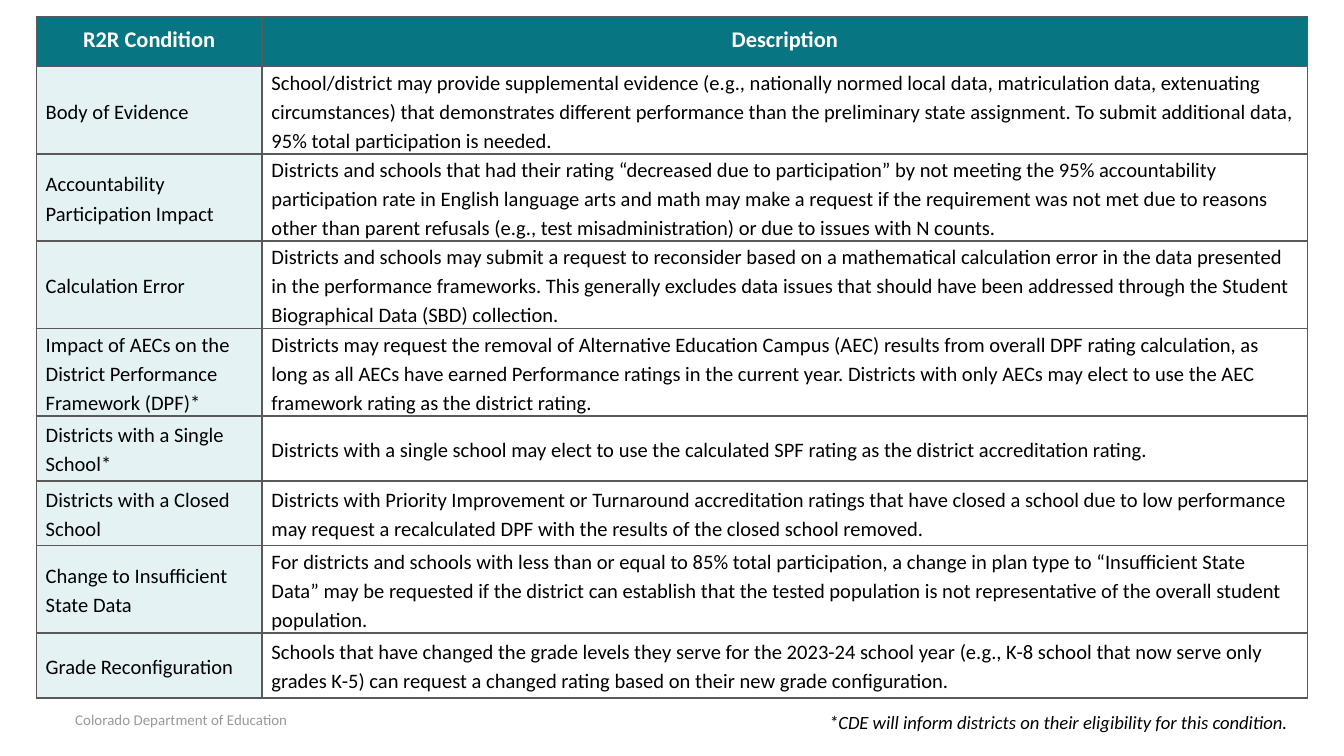
from dataclasses import dataclass

from lxml.etree import SubElement
from pptx import Presentation
from pptx.dml.color import RGBColor
from pptx.enum.text import MSO_ANCHOR as Anchor, PP_ALIGN as Align
from pptx.oxml.ns import qn
from pptx.util import Inches, Pt

WIDTH, HEIGHT = 10, 5.625
COLORS = {
    "header": "077682",
    "condition": "E4F2F4",
    "description": "FFFFFF",
    "border": "595959",
    "white": "FFFFFF",
    "black": "000000",
    "footer": "999999",
}
TABLE_LEFT, TABLE_TOP = 0.27, 0.125
COLUMN_WIDTHS = (1.68, 7.78)
HEADER_HEIGHT = 0.37
ROW_HEIGHTS = {2: 0.483, 3: 0.65}  # by number of text lines
CELL_MARGIN = 0.07


@dataclass(frozen=True)
class Condition:
    name: str
    description: str
    lines: int = 3


@dataclass(frozen=True)
class Area:
    """A place on the slide, as shares of its width and height."""
    left: float
    top: float
    width: float
    height: float


HEADINGS = ("R2R Condition", "Description")
CONDITIONS = (
    Condition(
        "Body of Evidence",
        "School/district may provide supplemental evidence (e.g., nationally normed local data, "
        "matriculation data, extenuating circumstances) that demonstrates different performance "
        "than the preliminary state assignment. To submit additional data, 95% total "
        "participation is needed."),
    Condition(
        "Accountability Participation Impact",
        "Districts and schools that had their rating “decreased due to participation” by not "
        "meeting the 95% accountability participation rate in English language arts and math may "
        "make a request if the requirement was not met due to reasons other than parent refusals "
        "(e.g., test misadministration) or due to issues with N counts."),
    Condition(
        "Calculation Error",
        "Districts and schools may submit a request to reconsider based on a mathematical "
        "calculation error in the data presented in the performance frameworks. This generally "
        "excludes data issues that should have been addressed through the Student Biographical "
        "Data (SBD) collection."),
    Condition(
        "Impact of AECs on the District Performance Framework (DPF)*",
        "Districts may request the removal of Alternative Education Campus (AEC) results from "
        "overall DPF rating calculation, as long as all AECs have earned Performance ratings in "
        "the current year. Districts with only AECs may elect to use the AEC framework rating as "
        "the district rating."),
    Condition(
        "Districts with a Single School*",
        "Districts with a single school may elect to use the calculated SPF rating as the "
        "district accreditation rating.", lines=2),
    Condition(
        "Districts with a Closed School",
        "Districts with Priority Improvement or Turnaround accreditation ratings that have closed "
        "a school due to low performance may request a recalculated DPF with the results of the "
        "closed school removed.", lines=2),
    Condition(
        "Change to Insufficient State Data",
        "For districts and schools with less than or equal to 85% total participation, a change "
        "in plan type to “Insufficient State Data” may be requested if the district can establish "
        "that the tested population is not representative of the overall student population."),
    Condition(
        "Grade Reconfiguration",
        "Schools that have changed the grade levels they serve for the 2023-24 school year (e.g., "
        "K-8 school that now serve only grades K-5) can request a changed rating based on their "
        "new grade configuration.", lines=2),
)


def write(frame, text: str, *, size: float, color: str, bold: bool = False,
          italic: bool = False, align=Align.LEFT, spacing: float = 1, before: float = 0) -> None:
    para = frame.paragraphs[0]
    para.alignment = align
    para.line_spacing = spacing
    para.space_before = Pt(before)
    span = para.add_run()
    span.text = text
    font = span.font
    font.name, font.size, font.bold, font.italic = "Calibri", Pt(size), bold, italic
    font.color.rgb = RGBColor.from_string(COLORS[color])


def add_text(page, area: Area, text: str, *, margin: float = 0, **style) -> None:
    box = page.shapes.add_textbox(
        Inches(area.left * WIDTH), Inches(area.top * HEIGHT),
        Inches(area.width * WIDTH), Inches(area.height * HEIGHT))
    frame = box.text_frame
    frame.word_wrap = True
    frame.margin_left = frame.margin_right = Inches(margin)
    frame.margin_top = frame.margin_bottom = Inches(margin)
    write(frame, text, **style)


def add_borders(cell, width: float) -> None:
    properties = cell._tc.get_or_add_tcPr()
    for side in ("lnL", "lnR", "lnT", "lnB"):
        line = SubElement(properties, qn(f"a:{side}"), w=str(Pt(width)))
        fill = SubElement(line, qn("a:solidFill"))
        SubElement(fill, qn("a:srgbClr"), val=COLORS["border"])


def fill_cell(cell, text: str, *, fill: str, border: float = 1, margin_y: float = 0,
              anchor=Anchor.MIDDLE, **style) -> None:
    add_borders(cell, border)  # borders must precede the fill in the XML
    cell.fill.solid()
    cell.fill.fore_color.rgb = RGBColor.from_string(COLORS[fill])
    cell.margin_left = cell.margin_right = Inches(CELL_MARGIN)
    cell.margin_top = cell.margin_bottom = Inches(margin_y)
    cell.vertical_anchor = anchor
    write(cell.text_frame, text, **style)


def add_conditions_table(page) -> None:
    heights = [HEADER_HEIGHT] + [ROW_HEIGHTS[item.lines] for item in CONDITIONS]
    table = page.shapes.add_table(
        len(heights), len(COLUMN_WIDTHS), Inches(TABLE_LEFT), Inches(TABLE_TOP),
        Inches(sum(COLUMN_WIDTHS)), Inches(sum(heights))).table
    for column, width in zip(table.columns, COLUMN_WIDTHS):
        column.width = Inches(width)
    for row, height in zip(table.rows, heights):
        row.height = Inches(height)

    for index, heading in enumerate(HEADINGS):
        fill_cell(table.cell(0, index), heading, fill="header", border=0.75,
                  margin_y=CELL_MARGIN, anchor=Anchor.TOP, size=12, color="white",
                  bold=True, align=Align.CENTER)
    for number, item in enumerate(CONDITIONS, start=1):
        entries = (("condition", item.name), ("description", item.description))
        for index, (fill, text) in enumerate(entries):
            fill_cell(table.cell(number, index), text, fill=fill, size=11,
                      color="black", spacing=1.15, before=0.1)


def main() -> None:
    deck = Presentation()
    deck.slide_width, deck.slide_height = Inches(WIDTH), Inches(HEIGHT)
    page = deck.slides.add_slide(deck.slide_layouts[6])
    add_text(page, Area(0.056, 0.94, 0.323, 0.023), "Colorado Department of Education",
             size=8, color="footer")
    add_conditions_table(page)
    add_text(page, Area(0.607, 0.925, 0.365, 0.066),
             "*CDE will inform districts on their eligibility for this condition.",
             margin=0.1, size=10, color="black", italic=True)
    deck.save("out.pptx")


if __name__ == "__main__":
    main()
